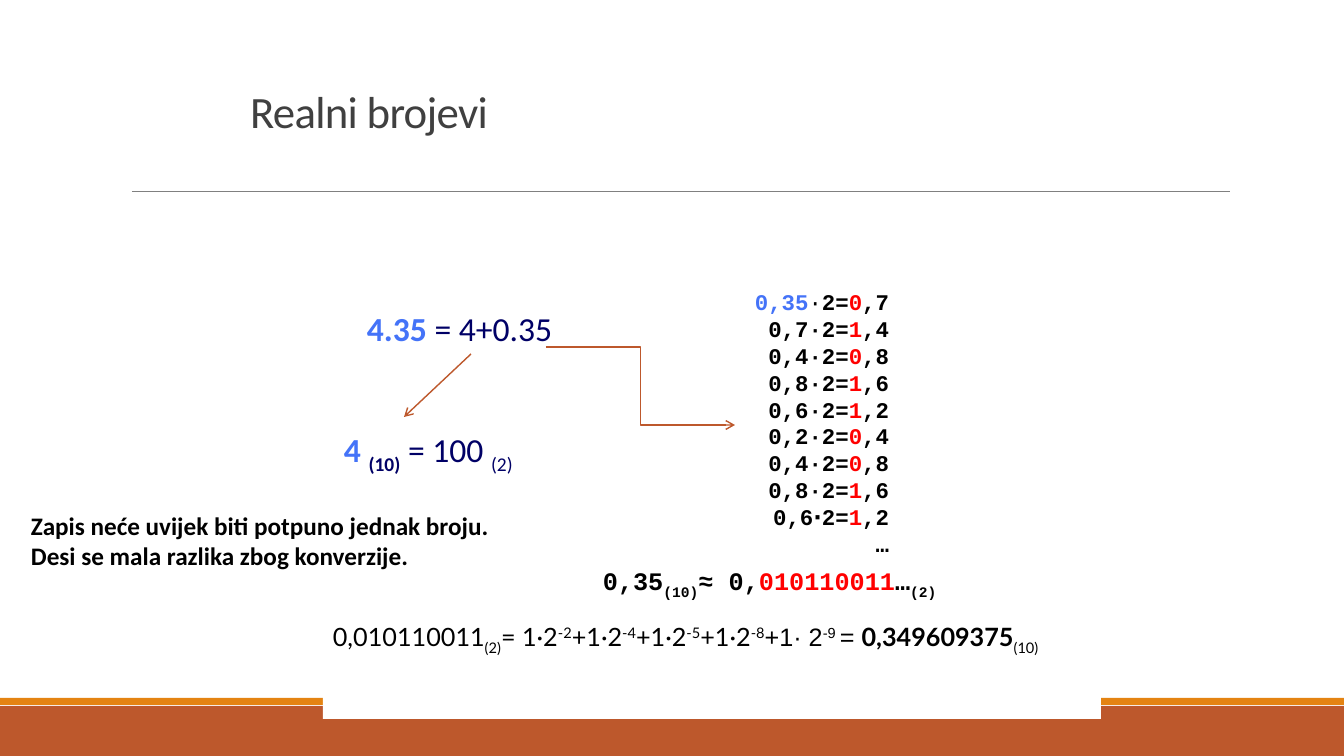
from lxml.etree import SubElement
from pptx import Presentation
from pptx.dml.color import RGBColor
from pptx.enum.shapes import MSO_CONNECTOR, MSO_SHAPE
from pptx.enum.text import MSO_ANCHOR, MSO_AUTO_SIZE, PP_ALIGN
from pptx.oxml.ns import qn
from pptx.util import Pt

PX = 914400 / 100.8

BLACK = RGBColor(0x00, 0x00, 0x00)
WHITE = RGBColor(0xFF, 0xFF, 0xFF)
RED = RGBColor(0xFF, 0x00, 0x00)
BLUE = RGBColor(0x44, 0x73, 0xF8)
NAVY = RGBColor(0x00, 0x00, 0x66)
DARK = RGBColor(0x40, 0x40, 0x40)
GRAY = RGBColor(0x80, 0x80, 0x80)
RUST = RGBColor(0xBD, 0x58, 0x2C)
ORANGE = RGBColor(0xE4, 0x83, 0x12)

# A span is its text and the settings that differ from its paragraph's.
SUB, SUPER = {"baseline": -30}, {"baseline": 30}
BOLD, DIGIT = {"bold": True}, {"color": RED}

TITLE = "Realni brojevi"
SUM = [("4.35 ", {"color": BLUE, "bold": True}), ("= 4+0.35", {})]
WHOLE_PART = [
    ("4 ", {"color": BLUE, "bold": True}),
    ("(10)", {"bold": True, "baseline": -25}),
    (" = 100 ", {}),
    ("(2)", {"baseline": -25}),
]
# Factor, look of the factor, look of the dot, whole digit, remainder
DOUBLINGS = [
    ("0,35", {"color": BLUE}, {"bold": False}, "0", ",7"),
    ("0,7", {}, {}, "1", ",4"),
    ("0,4", {}, {}, "0", ",8"),
    ("0,8", {}, {}, "1", ",6"),
    ("0,6", {}, {}, "1", ",2"),
    ("0,2", {}, {}, "0", ",4"),
    ("0,4", {}, {}, "0", ",8"),
    ("0,8", {}, {}, "1", ",6"),
    ("0,6", {}, {"font": "Calibri"}, "1", ",2"),
]
BINARY = [
    ("0,35", {}), ("(10)", SUB), ("≈ 0,", {}),
    ("010110011", DIGIT), ("…", {}), ("(2)", SUB),
]
CHECK = [
    ("0,010110011", {}), ("(2)", SUB),
    ("= 1·2", {}), ("-2", SUPER),
    ("+1·2", {}), ("-4", SUPER),
    ("+1·2", {}), ("-5", SUPER),
    ("+1·2", {}), ("-8", SUPER),
    ("+1· 2", {"font": "Arial"}),
    ("-9 ", {"font": "Arial", "baseline": 30}),
    ("= ", {"font": "Arial"}),
    ("0,349609375", BOLD), ("(10)", SUB),
]
REMARK = [
    [("Zapis neće uvijek biti potpuno jednak broju.", {})],
    [("Desi se mala razlika zbog konverzije.", {})],
]


def px(*lengths):
    return [round(length * PX) for length in lengths]


def add_span(para, text, font, size, color, bold=False, baseline=0):
    span = para.add_run()
    span.text = text
    span.font.name = font
    span.font.size = Pt(size)
    span.font.color.rgb = color
    span.font.bold = bold
    if baseline:
        span._r.get_or_add_rPr().set("baseline", str(baseline * 1000))
    return span


def write(frame, paragraphs, align=PP_ALIGN.LEFT, spacing=1.0, **look):
    for number, spans in enumerate(paragraphs):
        para = frame.add_paragraph() if number else frame.paragraphs[0]
        para.alignment = align
        para.line_spacing = spacing
        for text, changes in spans:
            add_span(para, text, **{**look, **changes})


def add_text(page, place, paragraphs, anchor=MSO_ANCHOR.TOP, **look):
    frame = page.shapes.add_textbox(*px(*place)).text_frame
    frame.word_wrap = False
    frame.auto_size = MSO_AUTO_SIZE.SHAPE_TO_FIT_TEXT
    frame.vertical_anchor = anchor
    write(frame, paragraphs, **look)


def add_panel(page, place, fill):
    panel = page.shapes.add_shape(MSO_SHAPE.RECTANGLE, *px(*place))
    panel.shadow.inherit = False
    panel.fill.solid()
    panel.fill.fore_color.rgb = fill
    panel.line.fill.background()
    frame = panel.text_frame
    frame.word_wrap = True
    frame.vertical_anchor = MSO_ANCHOR.TOP
    return frame


def add_line(page, kind, ends, color, width, arrow=False):
    line = page.shapes.add_connector(kind, *px(*ends))
    line.line.color.rgb = color
    line.line.width = Pt(width)
    if arrow:
        SubElement(line.line._get_or_add_ln(), qn("a:tailEnd"), type="arrow")
    SubElement(line._element.spPr, qn("a:effectLst"))


def add_title(page):
    title = page.shapes.title
    title.left, title.top, title.width, title.height = px(240, 42, 857, 101)
    frame = title.text_frame
    frame.vertical_anchor = MSO_ANCHOR.BOTTOM
    para = frame.paragraphs[0]
    para.alignment = PP_ALIGN.LEFT
    para.line_spacing = 0.85
    span = add_span(para, TITLE, "Calibri", 32, DARK)
    span._r.get_or_add_rPr().set("spc", "-50")


def main():
    deck = Presentation()
    deck.slide_width, deck.slide_height = px(1344, 756)
    page = deck.slides.add_slide(deck.slide_layouts[5])

    add_panel(page, (0, 706, 1344, 50), RUST)
    add_panel(page, (0, 698, 1344, 7), ORANGE)
    add_line(page, MSO_CONNECTOR.STRAIGHT, (132, 191, 1230, 191), GRAY, 0.5)
    add_title(page)

    write(add_panel(page, (593, 560, 461, 47), WHITE), [BINARY],
          font="Courier New", size=18, color=BLACK, bold=True)

    doublings = [
        [(factor, factor_look), ("∙", dot_look), ("2=", {}), (digit, DIGIT), (rest, {})]
        for factor, factor_look, dot_look, digit, rest in DOUBLINGS
    ]
    add_text(page, (743, 282, 156, 281), doublings + [[("…", {})]],
             anchor=MSO_ANCHOR.MIDDLE, align=PP_ALIGN.RIGHT,
             font="Courier New", size=16, color=BLACK, bold=True)

    add_text(page, (334, 425, 199, 46), [WHOLE_PART], spacing=0.9,
             font="Calibri", size=24, color=NAVY)
    write(add_panel(page, (323, 616, 778, 103), WHITE), [CHECK],
          font="Lato", size=18, color=BLACK)
    add_text(page, (357, 307, 207, 46), [SUM], spacing=0.9,
             font="Calibri", size=24, color=NAVY)

    add_line(page, MSO_CONNECTOR.STRAIGHT, (471, 354, 404, 417), RUST, 1, arrow=True)
    add_line(page, MSO_CONNECTOR.ELBOW, (546, 347, 735, 425), RUST, 1, arrow=True)
    add_text(page, (21, 505, 482, 72), REMARK,
             font="Calibri", size=18, color=BLACK, bold=True)

    deck.save("out.pptx")


if __name__ == "__main__":
    main()
